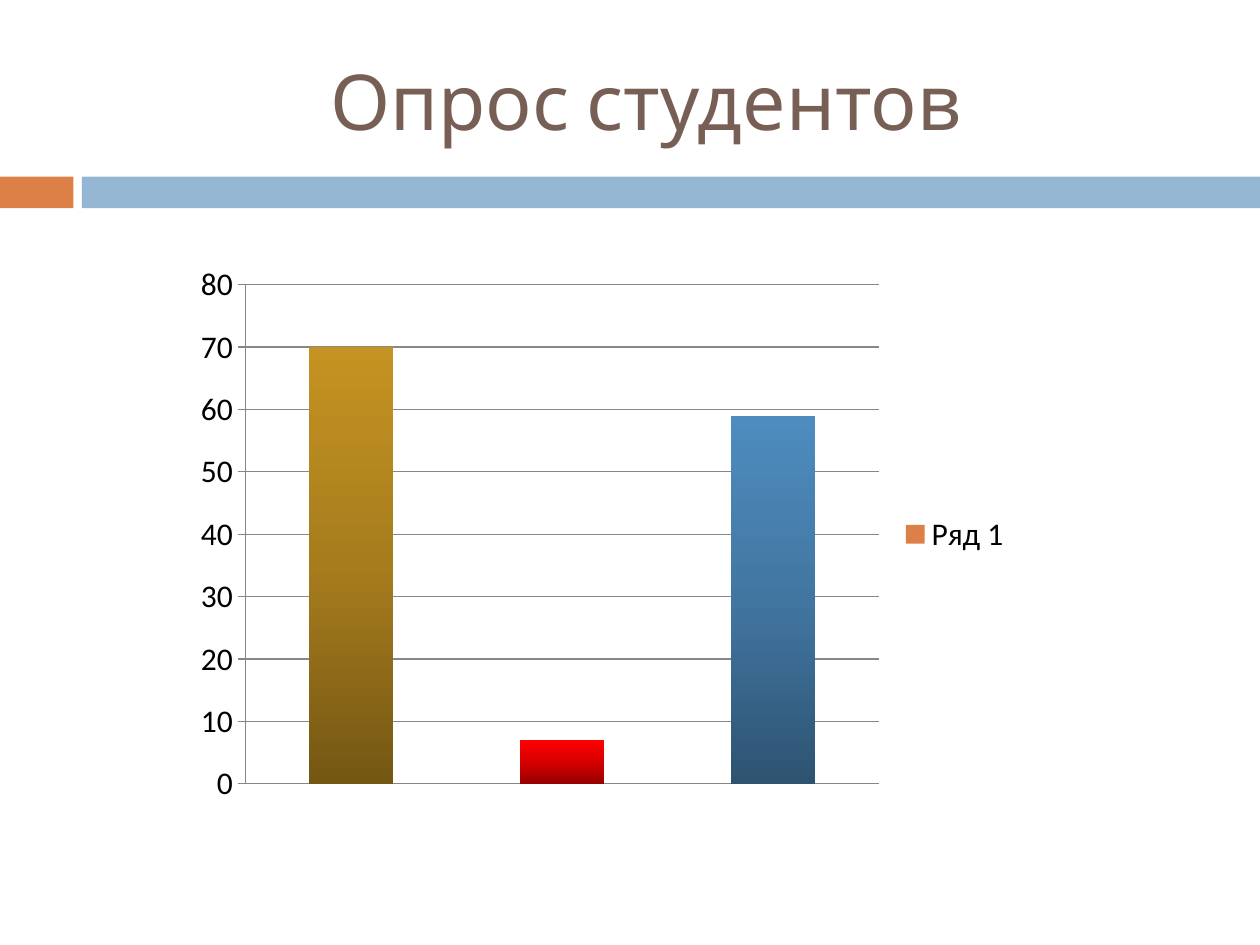
from copy import deepcopy
from dataclasses import dataclass

from pptx import Presentation
from pptx.chart.data import CategoryChartData
from pptx.dml.color import RGBColor
from pptx.enum.chart import XL_CHART_TYPE, XL_LEGEND_POSITION, XL_TICK_MARK
from pptx.enum.shapes import MSO_SHAPE
from pptx.enum.text import MSO_ANCHOR, PP_ALIGN
from pptx.oxml.ns import qn
from pptx.util import Cm, Pt


@dataclass(frozen=True)
class Theme:
    title_font: str = "Cabin"
    chart_font: str = "Calibri"
    title_size: int = 44
    chart_size: int = 18
    title: str = "775F55"
    text: str = "000000"
    orange: str = "DD8047"
    blue: str = "94B6D2"
    grid: str = "878787"
    # Bar gradients, from the foot of the bar to its top
    bars: tuple = (
        ("755714", "A67C1D", "C59322"),
        ("970000", "D70000", "FF0000"),
        ("2E5371", "4176A1", "4E8CBF"),
    )


THEME = Theme()


def set_format(target, values):
    for name, value in values.items():
        setattr(target, name, value)


def font_format(name, size):
    return {"name": name, "size": Pt(size)}


def add_band(page, left, top, width, height):
    """Orange tab and blue strip, separated by a narrow gap."""
    tab, gap = Cm(1.48), Cm(0.17)
    strip_left = tab + gap
    parts = (
        (left, tab, THEME.orange),
        (left + strip_left, width - strip_left, THEME.blue),
    )
    for part_left, part_width, color in parts:
        strip = page.shapes.add_shape(
            MSO_SHAPE.RECTANGLE, part_left, top, part_width, height)
        strip.shadow.inherit = False
        strip.fill.solid()
        strip.fill.fore_color.rgb = RGBColor.from_string(color)
        strip.line.fill.background()


def add_title(page, text, left, top, width, height):
    box = page.shapes.add_textbox(left, top, width, height)
    set_format(box.text_frame, {
        "word_wrap": True, "vertical_anchor": MSO_ANCHOR.MIDDLE})
    para = box.text_frame.paragraphs[0]
    para.alignment = PP_ALIGN.CENTER
    span = para.add_run()
    span.text = text
    set_format(span.font, font_format(THEME.title_font, THEME.title_size))
    span.font.color.rgb = RGBColor.from_string(THEME.title)


def paint_bars(series):
    """Give each bar its own three-stop vertical gradient."""
    fills = [series.points[index].format.fill for index in range(len(THEME.bars))]
    for fill in fills:
        fill.gradient()
        fill.gradient_angle = 90
    # A new gradient has two stops: add the middle one
    for stop_list in series._element.iter(qn("a:gsLst")):
        stop_list.insert(1, deepcopy(stop_list[0]))
    for fill, colors in zip(fills, THEME.bars):
        for index, (stop, color) in enumerate(zip(fill.gradient_stops, colors)):
            stop.position = index / 2
            stop.color.rgb = RGBColor.from_string(color)


def add_survey_chart(page, left, top, width, height):
    data = CategoryChartData()
    data.categories = ["1", "2", "3"]
    data.add_series("Ряд 1", (70, 7, 59))
    chart = page.shapes.add_chart(
        XL_CHART_TYPE.COLUMN_CLUSTERED, left, top, width, height, data).chart
    set_format(chart, {"has_title": False, "has_legend": True})
    set_format(chart.font, font_format(THEME.chart_font, THEME.chart_size))
    chart.font.color.rgb = RGBColor.from_string(THEME.text)
    set_format(chart.legend, {
        "position": XL_LEGEND_POSITION.RIGHT, "include_in_layout": False})

    # Axes
    chart.category_axis.visible = False
    set_format(chart.value_axis, {
        "minimum_scale": 0, "maximum_scale": 80, "major_unit": 10,
        "has_major_gridlines": True,
        "major_tick_mark": XL_TICK_MARK.OUTSIDE,
        "minor_tick_mark": XL_TICK_MARK.NONE})
    for owner in (chart.value_axis, chart.value_axis.major_gridlines):
        owner.format.line.width = Pt(0.75)
        owner.format.line.color.rgb = RGBColor.from_string(THEME.grid)

    # Bars
    plot = chart.plots[0]
    set_format(plot, {"gap_width": 150, "vary_by_categories": False})
    series = plot.series[0]
    series.format.fill.solid()
    series.format.fill.fore_color.rgb = RGBColor.from_string(THEME.orange)
    paint_bars(series)


def main():
    deck = Presentation()
    set_format(deck, {"slide_width": Cm(25.4), "slide_height": Cm(19.05)})
    page = deck.slides.add_slide(deck.slide_layouts[6])
    add_band(page, 0, Cm(3.56), deck.slide_width, Cm(0.64))
    add_title(page, "Опрос студентов", Cm(1.7), Cm(0.64), Cm(22.66), Cm(2.74))
    add_survey_chart(page, Cm(3.71), Cm(5.13), Cm(16.94), Cm(11.28))
    deck.save("out.pptx")


if __name__ == "__main__":
    main()
